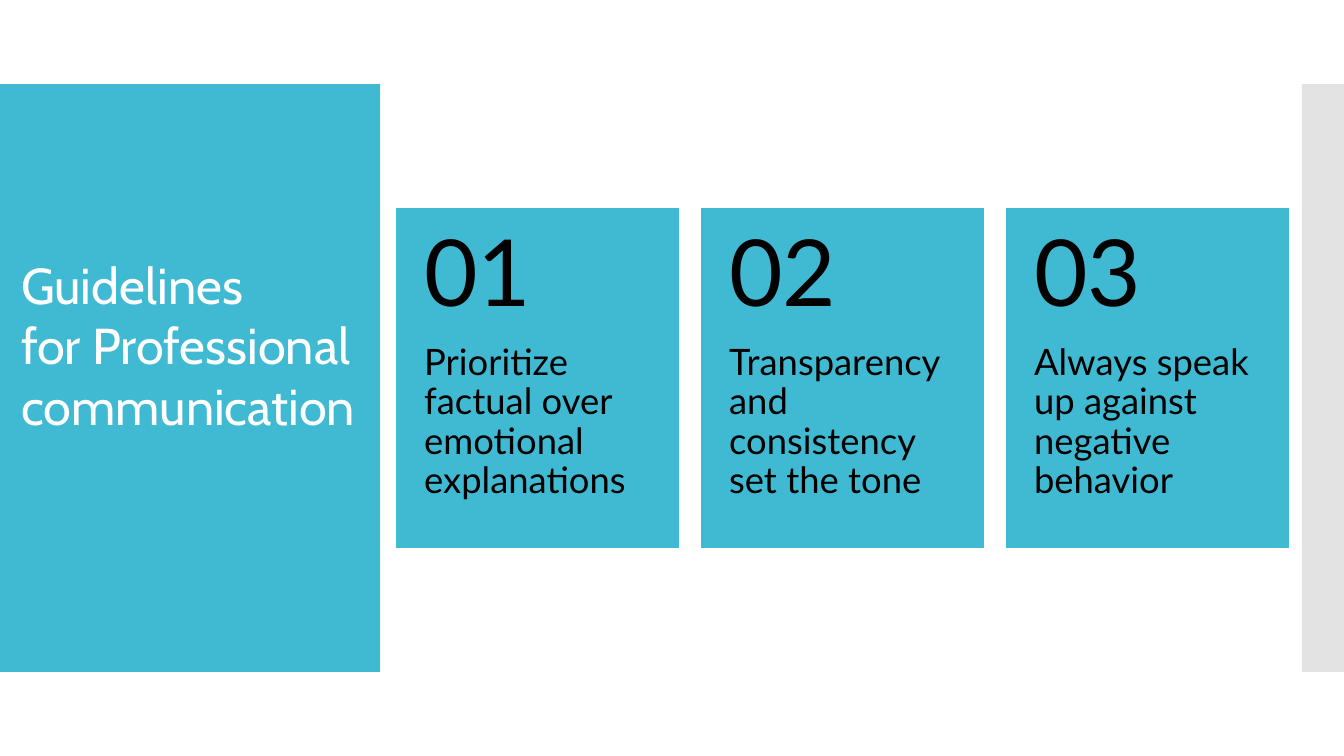
from dataclasses import dataclass

from lxml.etree import SubElement
from pptx import Presentation
from pptx.dml.color import RGBColor
from pptx.enum.shapes import MSO_SHAPE
from pptx.enum.text import MSO_ANCHOR, PP_ALIGN
from pptx.oxml.ns import qn
from pptx.util import Pt

TITLE_LINES = ["Guidelines", "for Professional", "communication"]
GUIDELINES = [
    "Prioritize factual over emotional explanations",
    "Transparency and consistency set the tone",
    "Always speak up against negative behavior",
]


@dataclass(frozen=True)
class Theme:
    accent: RGBColor = RGBColor(0x40, 0xBA, 0xD2)
    stripe: RGBColor = RGBColor(0xC8, 0xC8, 0xC8)
    light: RGBColor = RGBColor(0xFF, 0xFF, 0xFF)
    dark: RGBColor = RGBColor(0, 0, 0)
    title_font: str = "Cabin"
    body_font: str = "Lato"
    title_size: int = 36
    number_size: int = 66
    body_size: int = 26


THEME = Theme()
SLIDE_WIDTH, SLIDE_HEIGHT = 960, 540
BAND_TOP, BAND_HEIGHT = 60, 420
PANEL_WIDTH, STRIPE_WIDTH = 271.5, 30
CARD_LEFT, CARD_TOP, CARD_WIDTH, CARD_HEIGHT = 283, 149, 201.8, 242
CARD_PITCH = 217.8
NUMBER_HEIGHT = CARD_HEIGHT * 0.4


def add_box(slide, left, top, width, height, color):
    shape = slide.shapes.add_shape(
        MSO_SHAPE.RECTANGLE, Pt(left), Pt(top), Pt(width), Pt(height))
    shape.shadow.inherit = False
    shape.fill.solid()
    shape.fill.fore_color.rgb = color
    shape.line.fill.background()
    return shape


def set_opacity(shape, percent):
    color = shape.fill._xPr.find(qn("a:solidFill"))[0]
    SubElement(color, qn("a:alpha")).set("val", str(percent * 1000))


def add_text(slide, left, top, width, height, lines, font, size, color,
             insets=(7.2, 3.6, 7.2, 3.6), anchor=MSO_ANCHOR.TOP, spacing=1.0):
    """Add a wrapped text box; insets run left, top, right, bottom."""
    box = slide.shapes.add_textbox(Pt(left), Pt(top), Pt(width), Pt(height))
    frame = box.text_frame
    frame.word_wrap = True
    frame.vertical_anchor = anchor
    (frame.margin_left, frame.margin_top,
     frame.margin_right, frame.margin_bottom) = map(Pt, insets)
    frame.text = "\n".join(lines)
    for paragraph in frame.paragraphs:
        paragraph.alignment = PP_ALIGN.LEFT
        paragraph.line_spacing = spacing
        paragraph.font.name = font
        paragraph.font.size = Pt(size)
        paragraph.font.color.rgb = color


def add_card(slide, index, guideline):
    left = CARD_LEFT + index * CARD_PITCH
    card = add_box(slide, left, CARD_TOP, CARD_WIDTH, CARD_HEIGHT, THEME.accent)
    card.line.color.rgb = THEME.accent
    card.line.width = Pt(0.75)
    add_text(slide, left, CARD_TOP + NUMBER_HEIGHT, CARD_WIDTH,
             CARD_HEIGHT - NUMBER_HEIGHT, [guideline], THEME.body_font,
             THEME.body_size, THEME.dark, insets=(20, 0, 20, 26), spacing=0.9)
    add_text(slide, left, CARD_TOP, CARD_WIDTH, NUMBER_HEIGHT,
             [f"{index + 1:02d}"], THEME.body_font, THEME.number_size,
             THEME.dark, insets=(20, 13, 20, 13), anchor=MSO_ANCHOR.MIDDLE,
             spacing=0.9)


def main():
    presentation = Presentation()
    presentation.slide_width = Pt(SLIDE_WIDTH)
    presentation.slide_height = Pt(SLIDE_HEIGHT)
    slide = presentation.slides.add_slide(presentation.slide_layouts[6])

    add_box(slide, 0, BAND_TOP, PANEL_WIDTH, BAND_HEIGHT, THEME.accent)
    stripe = add_box(slide, SLIDE_WIDTH - STRIPE_WIDTH, BAND_TOP,
                     STRIPE_WIDTH, BAND_HEIGHT, THEME.stripe)
    set_opacity(stripe, 50)
    add_text(slide, 8, 178, 257, 138, TITLE_LINES, THEME.title_font,
             THEME.title_size, THEME.light)
    for index, guideline in enumerate(GUIDELINES):
        add_card(slide, index, guideline)

    presentation.save("out.pptx")


if __name__ == "__main__":
    main()
